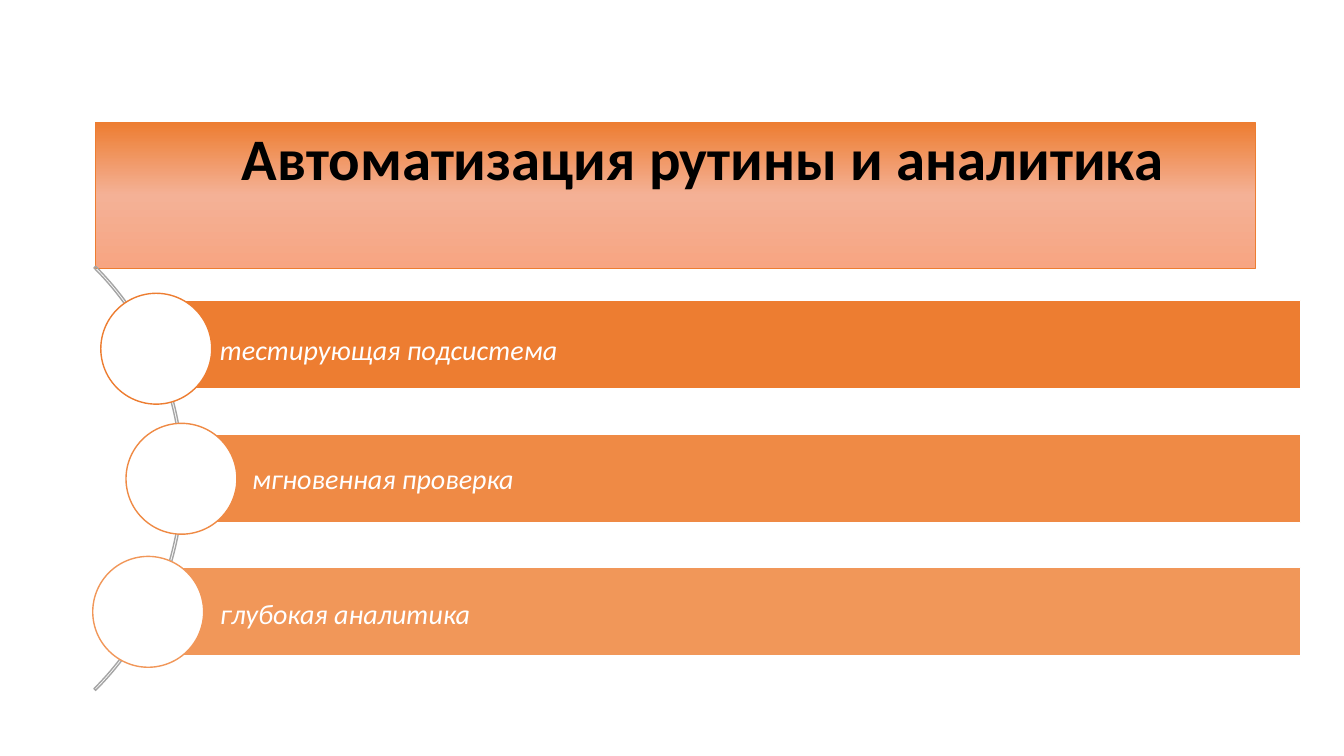
from collections import namedtuple
from copy import deepcopy

from pptx import Presentation
from pptx.dml.color import RGBColor
from pptx.enum.shapes import MSO_SHAPE as Shape
from pptx.enum.text import MSO_ANCHOR as Anchor, MSO_AUTO_SIZE as AutoSize, PP_ALIGN as Align
from pptx.oxml.ns import qn
from pptx.util import Inches, Pt

Theme = namedtuple("Theme", "font title_size item_size orange shades gradient arc white black")
theme = Theme(
    font="Calibri", title_size=42, item_size=20, orange="ED7D31",
    shades=("ED7D31", "EF8A45", "F19759"),
    gradient=((0, "ED7D31"), (0.5, "F4B196"), (1, "F7A582")),
    arc="A5A5A5", white="FFFFFF", black="000000",
)


def write(shape, text, size, color, bold=False, italic=False, align=Align.LEFT,
          anchor=Anchor.MIDDLE, left=0.7, top=0.06, spacing=1.0):
    frame = shape.text_frame
    frame.word_wrap = True
    frame.auto_size = AutoSize.NONE
    frame.vertical_anchor = anchor
    frame.margin_left, frame.margin_top = Inches(left), Inches(top)
    frame.margin_right = frame.margin_bottom = Inches(0.06)
    paragraph = frame.paragraphs[0]
    paragraph.alignment = align
    paragraph.line_spacing = spacing
    paragraph.space_before = Pt(0)
    run = paragraph.add_run()
    run.text = text
    run.font.name = theme.font
    run.font.size = Pt(size)
    run.font.bold, run.font.italic = bold, italic
    run.font.color.rgb = RGBColor.from_string(color)


def draw(kind, left, top, width, height, fill, line):
    shape = slide.shapes.add_shape(kind, Inches(left), Inches(top), Inches(width), Inches(height))
    shape.shadow.inherit = False
    shape.fill.solid()
    shape.fill.fore_color.rgb = RGBColor.from_string(fill)
    shape.line.color.rgb = RGBColor.from_string(line)
    shape.line.width = Pt(1)
    return shape


deck = Presentation()
deck.slide_width, deck.slide_height = Inches(13.33), Inches(7.5)
slide = deck.slides.add_slide(deck.slide_layouts[5])

heading = slide.shapes.title
heading.left, heading.top = Inches(0.95), Inches(1.21)
heading.width, heading.height = Inches(11.5), Inches(1.45)
heading.fill.gradient()
heading.fill.gradient_angle = 270
stop_list = heading.element.find(".//" + qn("a:gsLst"))
stop_list.append(deepcopy(stop_list[-1]))
for stop, (position, color) in zip(heading.fill.gradient_stops, theme.gradient):
    stop.position = position
    stop.color.rgb = RGBColor.from_string(color)
heading.line.color.rgb = RGBColor.from_string(theme.orange)
heading.line.width = Pt(0.5)
write(heading, "Автоматизация рутины и аналитика", theme.title_size, theme.black, bold=True,
      align=Align.CENTER, anchor=Anchor.TOP, left=0.6, top=0.08, spacing=0.9)

arc = draw(Shape.BLOCK_ARC, -4.13, 1.77, 5.95, 5.95, theme.white, theme.arc)
arc.fill.background()
for index, value in enumerate((189, 27, 0.004)):
    arc.adjustments[index] = value

bar_right, bar_height, circle_size = 12.9, 0.88, 1.1
features = (
    ("тестирующая подсистема", 1.48, 1.0, 2.91, 0.16),
    ("мгновенная проверка", 1.8, 1.25, 4.2, 0.06),
    ("глубокая аналитика", 1.48, 0.92, 5.52, 0.08),
)
for row, (feature, bar_left, circle_left, circle_top, inset) in enumerate(features):
    shade = theme.shades[row]
    bar = draw(Shape.RECTANGLE, bar_left, 2.98 + row * 1.325, bar_right - bar_left, bar_height,
               shade, theme.white)
    write(bar, feature, theme.item_size, theme.white, italic=True, top=inset)
    draw(Shape.OVAL, circle_left, circle_top, circle_size, circle_size, theme.white, shade)

deck.save("out.pptx")
